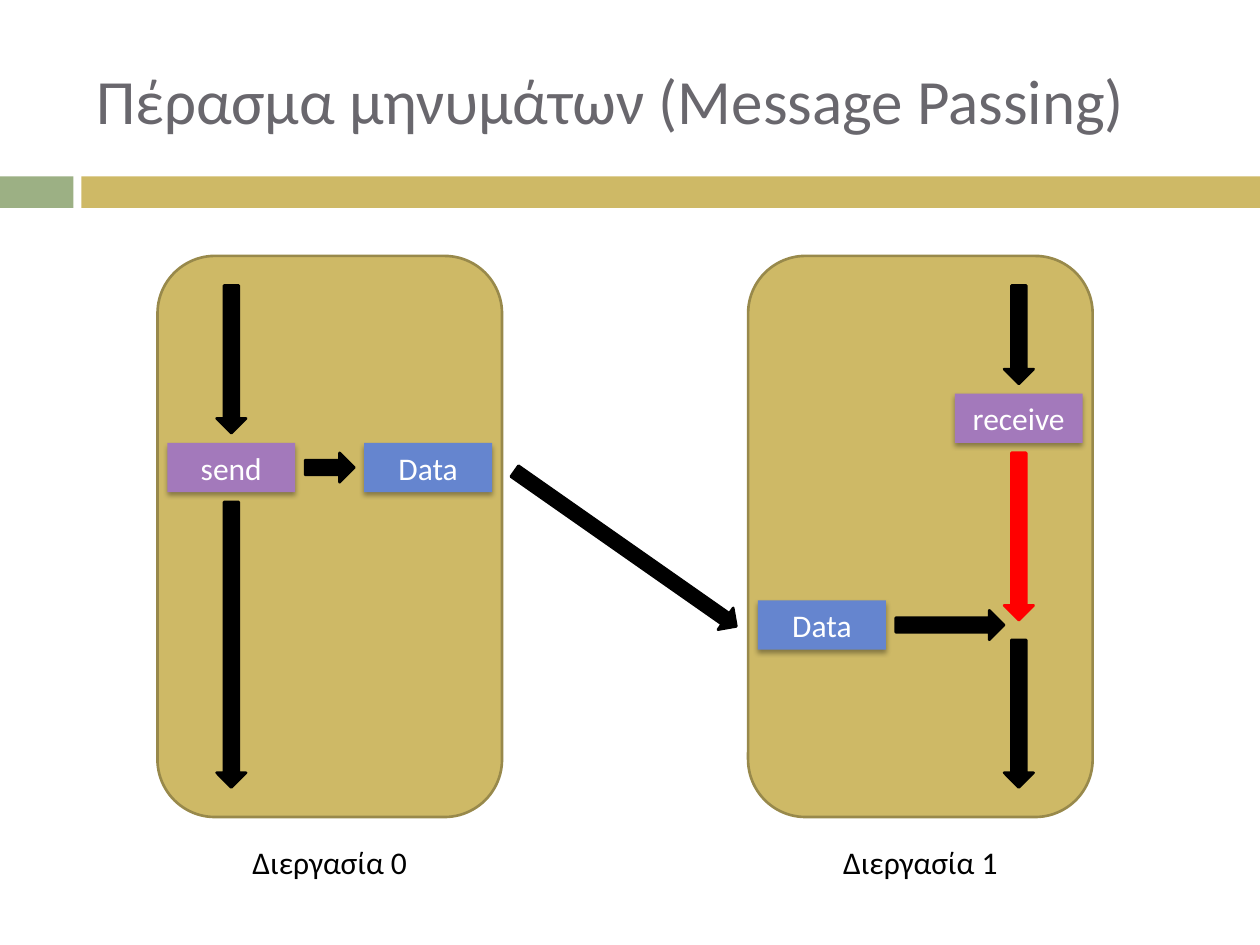
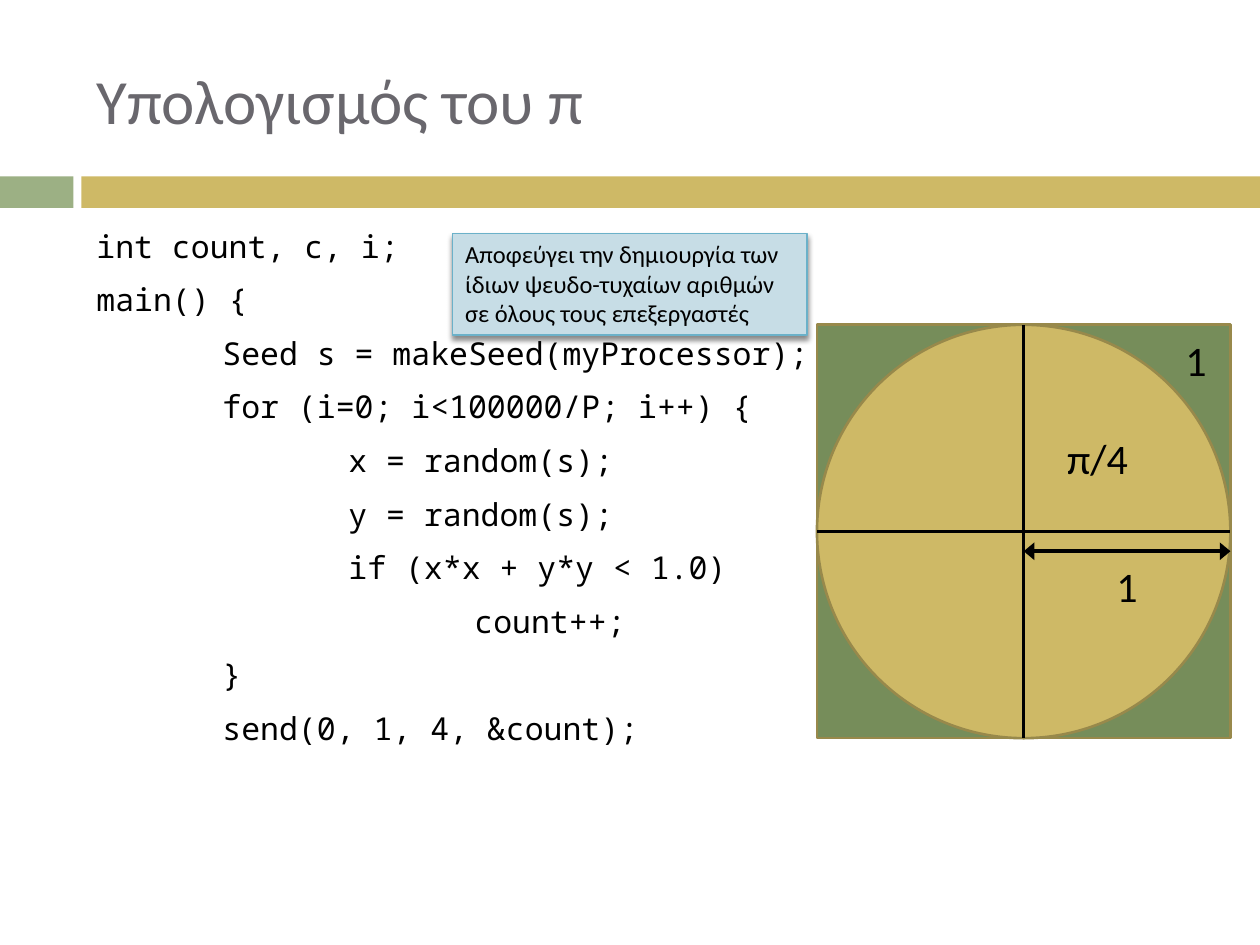
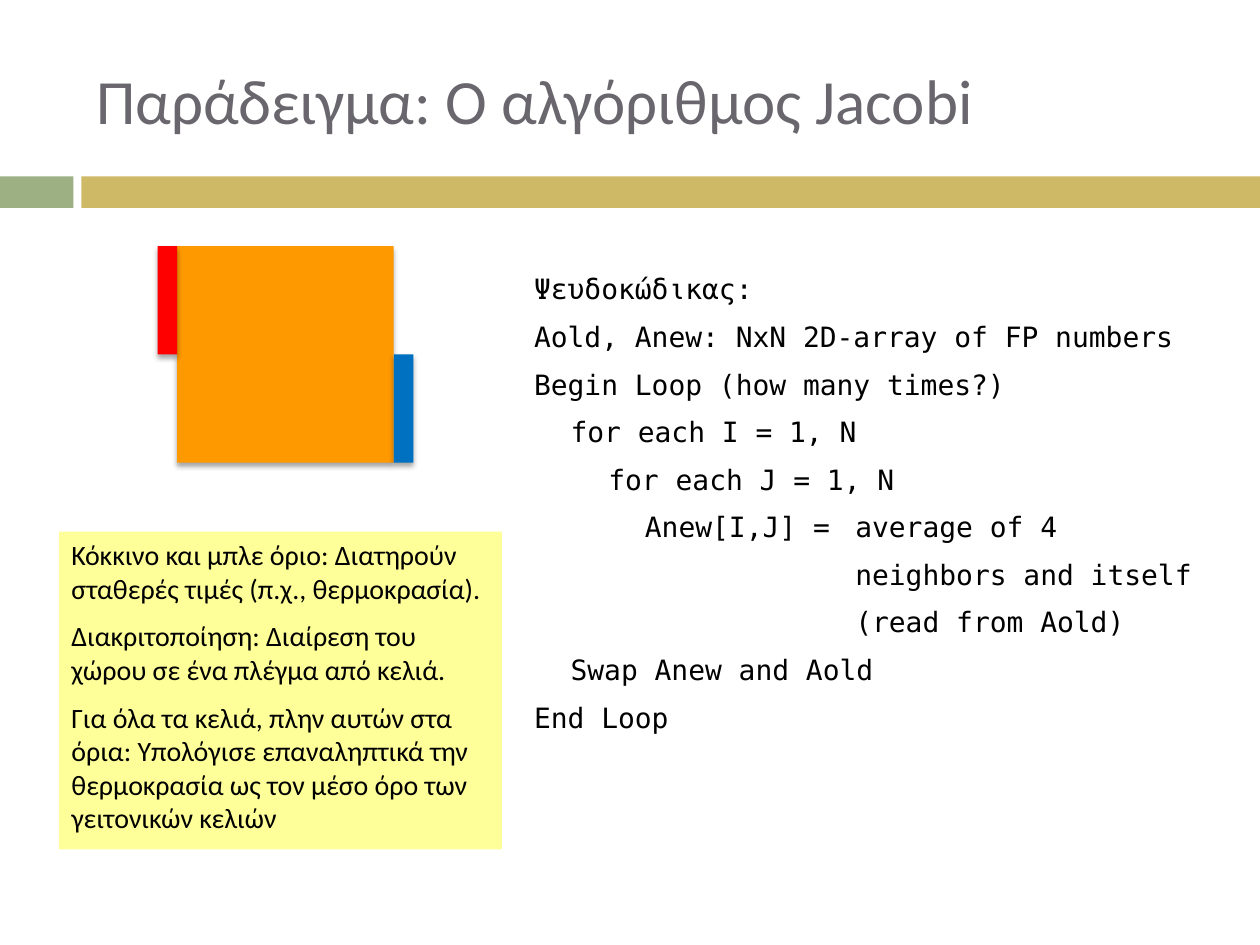
from lxml.etree import SubElement
from pptx import Presentation
from pptx.dml.color import RGBColor
from pptx.enum.shapes import MSO_CONNECTOR as Connector, MSO_SHAPE as Shape
from pptx.enum.text import MSO_ANCHOR as Anchor, PP_ALIGN as Align
from pptx.oxml.ns import qn
from pptx.util import Emu, Inches, Pt

WIDTH, HEIGHT = Inches(10), Inches(7.5)
UNIT = WIDTH / 128

GOLD, GOLD_EDGE = "CEB966", "98894B"
SAGE, MOSS = "9CB084", "768D5A"
PURPLE, BLUE = "A379BB", "6585CF"
BLACK, WHITE, RED = "000000", "FFFFFF", "FF0000"
SHADOW = {"alpha": 35, "blur": 3, "distance": 2}

TITLE_FONT = {"name": "Calibri", "size": Pt(36), "color": "69676D"}
LABEL_FONT = {"name": "Calibri", "size": Pt(18), "color": BLACK}
BLOCK_FONT = {**LABEL_FONT, "color": WHITE}
FIGURE_FONT = {**LABEL_FONT, "size": Pt(24)}
CALLOUT_FONT = {**LABEL_FONT, "size": Pt(14)}
NOTE_FONT = {**LABEL_FONT, "size": Pt(16)}
CODE_FONT = {"name": "Noto Sans Mono", "size": Pt(18), "color": BLACK}
PSEUDOCODE_FONT = {"name": "DejaVu Sans Mono", "size": Pt(16), "color": BLACK}

PI_CODE = [
    "int count, c, i;",
    "main() {",
    "\tSeed s = makeSeed(myProcessor);",
    "\tfor (i=0; i<100000/P; i++) {",
    "\t\tx = random(s);",
    "\t\ty = random(s);",
    "\t\tif (x*x + y*y < 1.0)",
    "\t\t\tcount++;",
    "\t}",
    "\tsend(0, 1, 4, &count);",
]
JACOBI_CODE = [
    "Ψευδοκώδικας:",
    "Aold, Anew: NxN 2D-array of FP numbers",
    "Begin Loop (how many times?)",
    "\tfor each I = 1, N",
    "\t\tfor each J = 1, N",
    "\t\t\tAnew[I,J] =\taverage of 4",
    "\t\t\t\tneighbors and itself",
    "\t\t\t\t(read from Aold)",
    "\tSwap Anew and Aold",
    "End Loop",
]
JACOBI_NOTES = [
    "Κόκκινο και μπλε όριο: Διατηρούν σταθερές τιμές (π.χ., θερμοκρασία).",
    "Διακριτοποίηση: Διαίρεση του χώρου σε ένα πλέγμα από κελιά.",
    "Για όλα τα κελιά, πλην αυτών στα όρια: Υπολόγισε επαναληπτικά την "
    "θερμοκρασία ως τον μέσο όρο των γειτονικών κελιών",
]


def color(value):
    """Turn a hex string into a colour."""
    return RGBColor.from_string(value)


def grid(*cells):
    """Turn grid units into lengths."""
    return [Emu(round(cell * UNIT)) for cell in cells]


def within(box, column, row, columns, rows):
    """Move a region given relative to a box onto the slide's grid."""
    return box[0] + column, box[1] + row, columns, rows


def add_shadow(shape, alpha, blur, distance):
    """Give a shape a soft shadow straight below it."""
    effects = shape._element.spPr.find(qn("a:effectLst"))
    outer = SubElement(effects, qn("a:outerShdw"), blurRad=str(Pt(blur)),
                       dist=str(Pt(distance)), dir="5400000", rotWithShape="0")
    tone = SubElement(outer, qn("a:srgbClr"), val=BLACK)
    SubElement(tone, qn("a:alpha"), val=str(alpha * 1000))


def add_figure(slide, kind, box, fill, line=None, width=1.5, shadow=None):
    """Draw a filled preset shape in a grid box."""
    shape = slide.shapes.add_shape(kind, *grid(*box))
    shape.shadow.inherit = False
    shape.fill.solid()
    shape.fill.fore_color.rgb = color(fill)
    if line:
        shape.line.color.rgb = color(line)
        shape.line.width = Pt(width)
    else:
        shape.line.fill.background()
    if shadow:
        add_shadow(shape, **shadow)
    return shape


def add_tabs(paragraph, stops):
    """Set left tab stops, in inches, on a paragraph."""
    tabs = SubElement(paragraph._p.get_or_add_pPr(), qn("a:tabLst"))
    for stop in stops:
        SubElement(tabs, qn("a:tab"), pos=str(Inches(stop)), algn="l")


def write(shape, lines, font, align=Align.LEFT, anchor=Anchor.TOP, tabs=()):
    """Fill a shape with paragraphs set half a font size apart."""
    frame = shape.text_frame
    frame.word_wrap = True
    frame.vertical_anchor = anchor
    for index, line in enumerate(lines):
        paragraph = frame.add_paragraph() if index else frame.paragraphs[0]
        paragraph.alignment = align
        paragraph.space_before = font["size"] // 2 if index else 0
        if tabs and "\t" in line:
            add_tabs(paragraph, tabs)
        run = paragraph.add_run()
        run.text = line
        for name, value in font.items():
            if name == "color":
                run.font.color.rgb = color(value)
            else:
                setattr(run.font, name, value)


def add_text(slide, box, lines, font, **layout):
    """Place a text box in a grid box."""
    write(slide.shapes.add_textbox(*grid(*box)), lines, font, **layout)


def add_centred(slide, box, text, font):
    """Place one line of text in the middle of a grid box."""
    add_text(slide, box, [text], font, align=Align.CENTER, anchor=Anchor.MIDDLE)


def add_line(slide, start, end, arrows=False):
    """Draw a straight black line between two grid points."""
    line = slide.shapes.add_connector(Connector.STRAIGHT, *grid(*start, *end))
    line.line.color.rgb = color(BLACK)
    line.line.width = Pt(2)
    if arrows:
        for side in ("a:headEnd", "a:tailEnd"):
            SubElement(line.line._get_or_add_ln(), qn(side), type="triangle", w="lg", len="med")
    SubElement(line._element.spPr, qn("a:effectLst"))


def add_block_arrow(slide, box, kind=Shape.DOWN_ARROW, fill=BLACK):
    """Draw a block arrow of one colour."""
    return add_figure(slide, kind, box, fill, fill)


def add_titled_slide(presentation, title):
    """Add a slide with the shared bands and title."""
    slide = presentation.slides.add_slide(presentation.slide_layouts[6])
    add_figure(slide, Shape.RECTANGLE, (0, 17.92, 7.47, 3.2), SAGE)
    add_figure(slide, Shape.RECTANGLE, (8.27, 17.92, 119.73, 3.2), GOLD)
    add_text(slide, (8.53, 3.2, 114.13, 13.87), [title], TITLE_FONT, anchor=Anchor.MIDDLE)
    return slide


def add_process(slide, box, name, blocks, down_arrows, right_arrow):
    """Draw a process with its blocks and arrows, all relative to its box."""
    add_figure(slide, Shape.ROUNDED_RECTANGLE, box, GOLD, GOLD_EDGE)
    add_text(slide, within(box, 0, 59, box[2], 5), [name], LABEL_FONT, align=Align.CENTER)
    for text, column, row, fill in blocks:
        block = add_figure(slide, Shape.RECTANGLE, within(box, column, row, 13, 5),
                           fill, shadow=SHADOW)
        write(block, [text], BLOCK_FONT, Align.CENTER, Anchor.MIDDLE)
    for column, row, rows, fill in down_arrows:
        add_block_arrow(slide, within(box, column, row, 3, rows), fill=fill)
    column, row, columns = right_arrow
    add_block_arrow(slide, within(box, column, row, columns, 3), Shape.RIGHT_ARROW)


def add_message_slide(presentation):
    """Show a message going from one process to another."""
    slide = add_titled_slide(presentation, "Πέρασμα μηνυμάτων (Message Passing)")
    add_process(slide, (16, 26, 35, 57), "Διεργασία 0",
                [("send", 1, 19, PURPLE), ("Data", 21, 19, BLUE)],
                [(6, 3, 15, BLACK), (6, 25, 29, BLACK)], (15, 20, 5))
    add_process(slide, (76, 26, 35, 57), "Διεργασία 1",
                [("receive", 21, 14, PURPLE), ("Data", 1, 35, BLUE)],
                [(26, 3, 10, BLACK), (26, 20, 17, RED), (26, 39, 15, BLACK)], (15, 36, 11))
    message = add_block_arrow(slide, (62.2, 42, 2.7, 27.5))
    message.rotation = 305


def add_circle_diagram(slide, box):
    """Draw a circle in a square with its axes, radius and labels."""
    left, top, side, _ = box
    right, bottom, radius = left + side, top + side, side / 2
    middle, centre = left + radius, top + radius
    add_figure(slide, Shape.RECTANGLE, box, MOSS, GOLD_EDGE)
    add_figure(slide, Shape.OVAL, box, GOLD, GOLD_EDGE)
    add_line(slide, (middle, top), (middle, bottom))
    add_line(slide, (left, centre), (right, centre))
    add_line(slide, (middle, centre + 2), (right, centre + 2), arrows=True)
    add_centred(slide, within(box, side - 7, 0, 7, 7), "1", FIGURE_FONT)
    add_centred(slide, within(box, radius + 3, 9, 9, 9), "π/4", FIGURE_FONT)
    add_centred(slide, within(box, radius, radius + 2, radius, 7), "1", FIGURE_FONT)


def add_pi_slide(presentation):
    """Show the code that estimates pi beside its diagram."""
    slide = add_titled_slide(presentation, "Υπολογισμός του π")
    add_text(slide, (8.53, 22.4, 119.47, 57.6), PI_CODE, CODE_FONT, tabs=(1, 2, 3))
    add_circle_diagram(slide, (83, 33, 42, 42))
    callout = add_figure(slide, Shape.RECTANGLE, (46, 23.7, 36, 10.35), "C7DDE6", "6BB1C9",
                         0.79, {"alpha": 45, "blur": 3, "distance": 2.4})
    write(callout, ["Αποφεύγει την δημιουργία των ίδιων ψευδο-τυχαίων αριθμών "
                    "σε όλους τους επεξεργαστές"], CALLOUT_FONT)


def add_heat_plate(slide, box):
    """Draw a plate with a red and a blue border on its sides."""
    side, border = box[2], 2
    half = side / 2
    for region, fill in (
        ((0, 0, side, side), "FF9900"),
        ((-border, 0, border, half), RED),
        ((side, half, border, half), "0070C0"),
    ):
        add_figure(slide, Shape.RECTANGLE, within(box, *region), fill, shadow=SHADOW)


def add_jacobi_slide(presentation):
    """Show the Jacobi plate, its notes and its pseudocode."""
    slide = add_titled_slide(presentation, "Παράδειγμα: Ο αλγόριθμος Jacobi")
    add_heat_plate(slide, (18, 25, 22, 22))
    notes = add_figure(slide, Shape.RECTANGLE, (6, 54, 45, 32.3), "FFFF99")
    write(notes, JACOBI_NOTES, NOTE_FONT)
    add_text(slide, (53, 27, 72, 51.3), JACOBI_CODE, PSEUDOCODE_FONT,
             tabs=(0.29, 0.59, 0.88, 2.55))


def main():
    """Build and save the presentation."""
    presentation = Presentation()
    presentation.slide_width, presentation.slide_height = WIDTH, HEIGHT
    add_message_slide(presentation)
    add_pi_slide(presentation)
    add_jacobi_slide(presentation)
    presentation.save("out.pptx")


if __name__ == "__main__":
    main()
